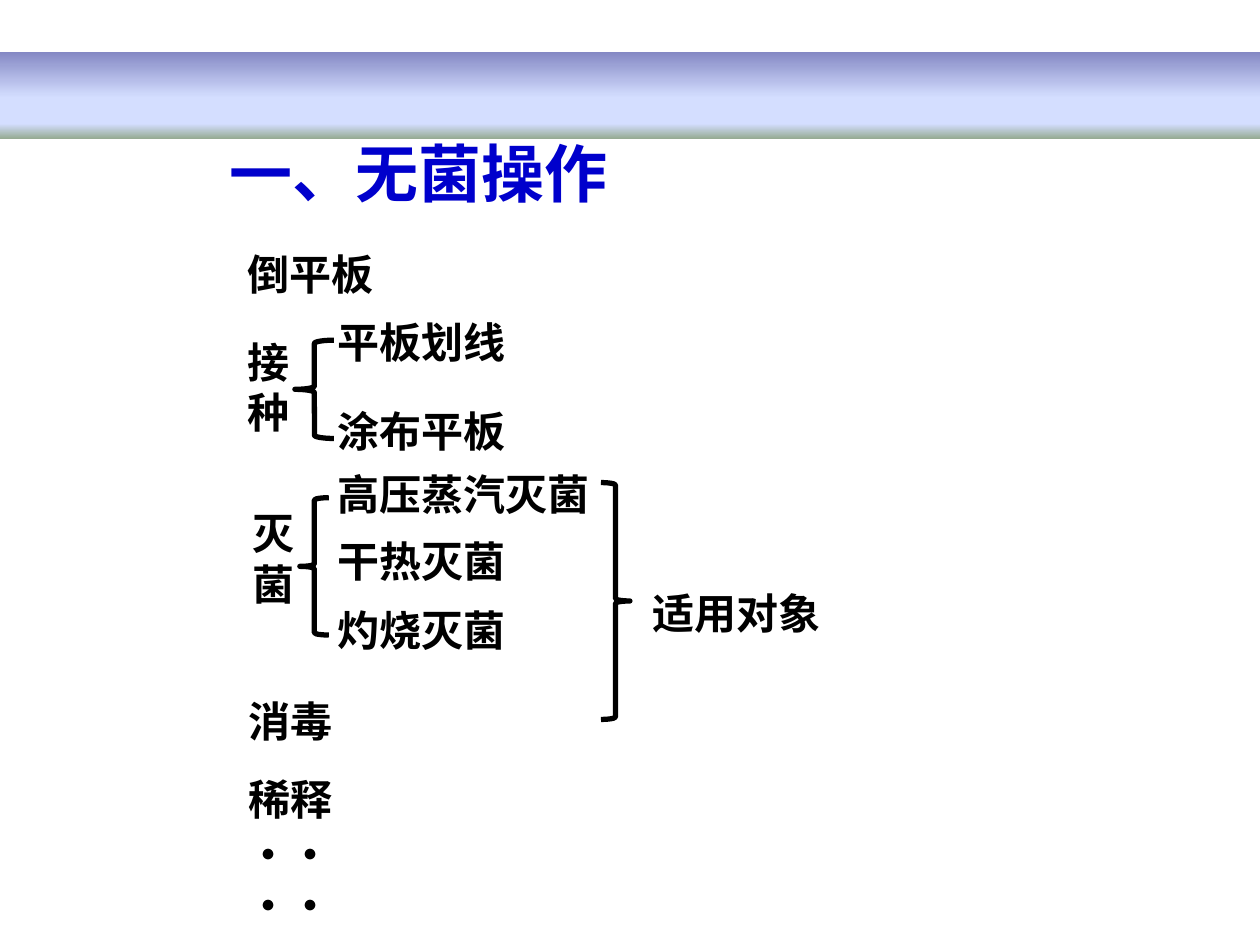
import lxml.etree
import pptx
import pptx.dml.color
import pptx.enum.shapes
import pptx.enum.text
import pptx.oxml.ns
import pptx.util
from dataclasses import dataclass

Inches = pptx.util.Inches
Shapes = pptx.enum.shapes.MSO_SHAPE
qn = pptx.oxml.ns.qn


@dataclass(frozen=True)
class Theme:
    font: str = "Noto Sans CJK SC"
    title_color: str = "0000CC"
    ink: str = "000000"
    title_size: int = 36
    body_size: int = 24
    brace_width: int = 3
    band_stops: tuple = ((0, "8488C4"), (53, "D4DEFF"), (83, "D4DEFF"), (100, "96AB94"))


class SlideBuilder:
    def __init__(self, page, theme):
        self.page = page
        self.theme = theme

    def shape(self, kind, left, top, width, height):
        shape = self.page.shapes.add_shape(
            kind, Inches(left), Inches(top), Inches(width), Inches(height))
        shape.shadow.inherit = False
        return shape

    def band(self, left, top, width, height):
        band = self.shape(Shapes.RECTANGLE, left, top, width, height)
        band.line.fill.background()
        band.fill.gradient()
        band.fill.gradient_angle = 270
        stops = band.element.spPr.find(".//" + qn("a:gsLst"))
        for stop in list(stops):
            stops.remove(stop)
        for percent, color in self.theme.band_stops:
            stop = lxml.etree.SubElement(stops, qn("a:gs"), pos=str(percent * 1000))
            lxml.etree.SubElement(stop, qn("a:srgbClr"), val=color)

    def brace(self, kind, left, top, width, height):
        brace = self.shape(kind, left, top, width, height)
        brace.fill.background()
        brace.line.color.rgb = pptx.dml.color.RGBColor.from_string(self.theme.ink)
        brace.line.width = pptx.util.Pt(self.theme.brace_width)

    def text(self, words, left, top, width, height=0.5, size=None, color=None):
        box = self.page.shapes.add_textbox(
            Inches(left), Inches(top), Inches(width), Inches(height))
        frame = box.text_frame
        frame.word_wrap = True
        frame.auto_size = pptx.enum.text.MSO_AUTO_SIZE.SHAPE_TO_FIT_TEXT
        frame.text = words
        for para in frame.paragraphs:
            for span in para.runs:
                font = span.font
                font.size = pptx.util.Pt(size or self.theme.body_size)
                font.bold = True
                font.color.rgb = pptx.dml.color.RGBColor.from_string(color or self.theme.ink)
                font.name = self.theme.font
                # East Asian text takes its typeface from a:ea
                lxml.etree.SubElement(
                    span.font._element, qn("a:ea"), typeface=self.theme.font)


def main():
    deck = pptx.Presentation()
    deck.slide_width, deck.slide_height = Inches(10), Inches(7.5)
    theme = Theme()
    builder = SlideBuilder(deck.slides.add_slide(deck.slide_layouts[6]), theme)

    # Header band and title
    builder.band(0, 0.41, 10, 0.69)
    builder.text("一、无菌操作", 1.72, 1.02, 4.22, 0.71, theme.title_size, theme.title_color)

    # Main topics
    topic_left = 1.87
    builder.text("倒平板", topic_left, 1.92, 1.64)
    builder.text("接\n种", topic_left, 2.62, 0.63, 0.91)
    builder.text("灭菌", 1.91, 3.98, 0.7, 0.91)
    builder.text("消毒", topic_left, 5.47, 1.21)
    builder.text("稀释", topic_left, 6.09, 1.21)
    builder.text("‧‧‧‧‧‧", topic_left, 6.53, 0.94)

    # Methods under inoculation and sterilisation
    methods = (("平板划线", 2.46), ("涂布平板", 3.17), ("高压蒸汽灭菌", 3.67),
               ("干热灭菌", 4.2), ("灼烧灭菌", 4.75))
    for method, top in methods:
        builder.text(method, 2.58, top, 2.5)
    builder.text("适用对象", 5.08, 4.61, 1.64)

    # Braces grouping the methods
    builder.brace(Shapes.LEFT_BRACE, 2.34, 2.7, 0.31, 0.78)
    builder.brace(Shapes.LEFT_BRACE, 2.38, 3.95, 0.23, 1.09)
    builder.brace(Shapes.RIGHT_BRACE, 4.77, 3.83, 0.23, 1.88)

    deck.save("out.pptx")


if __name__ == "__main__":
    main()
